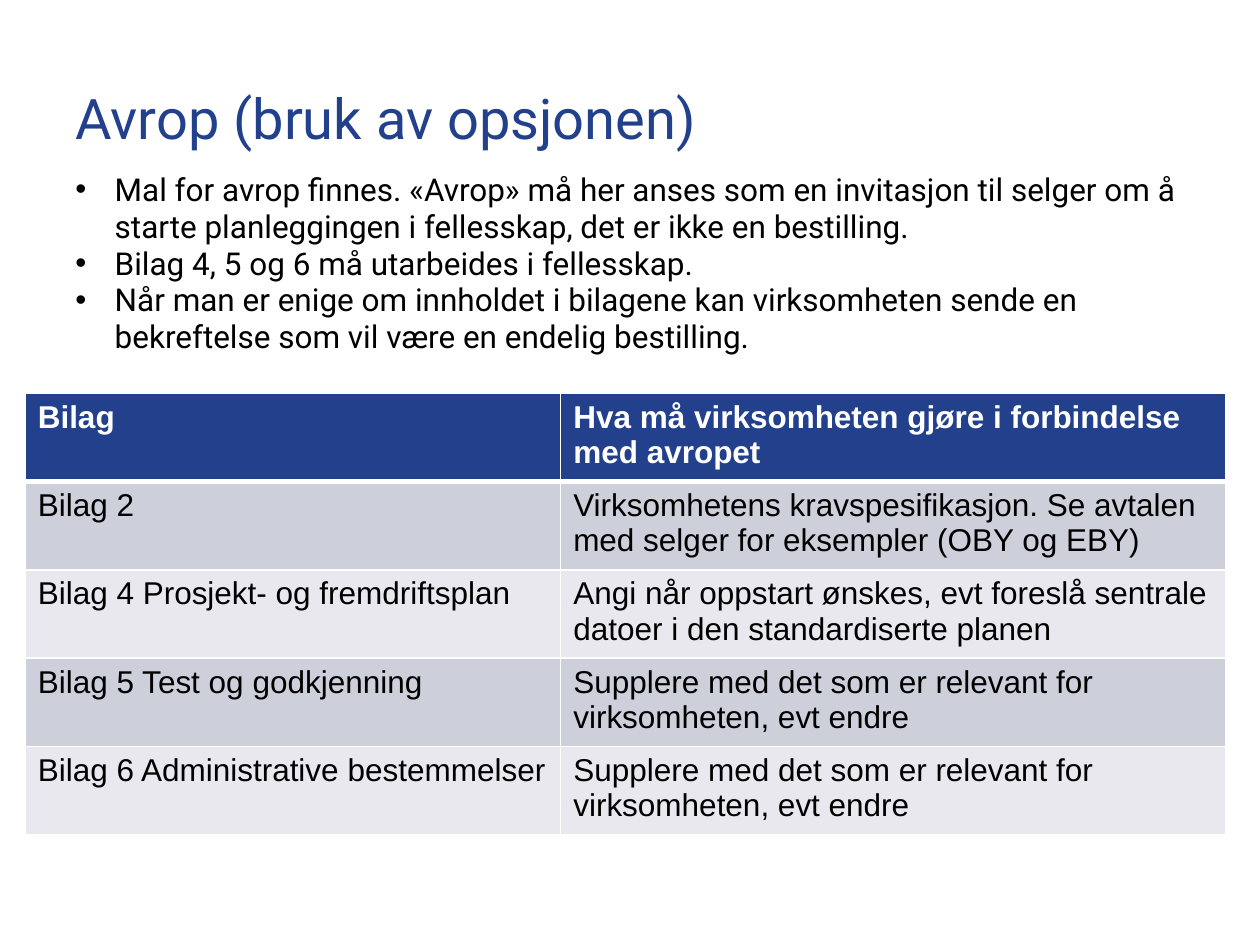
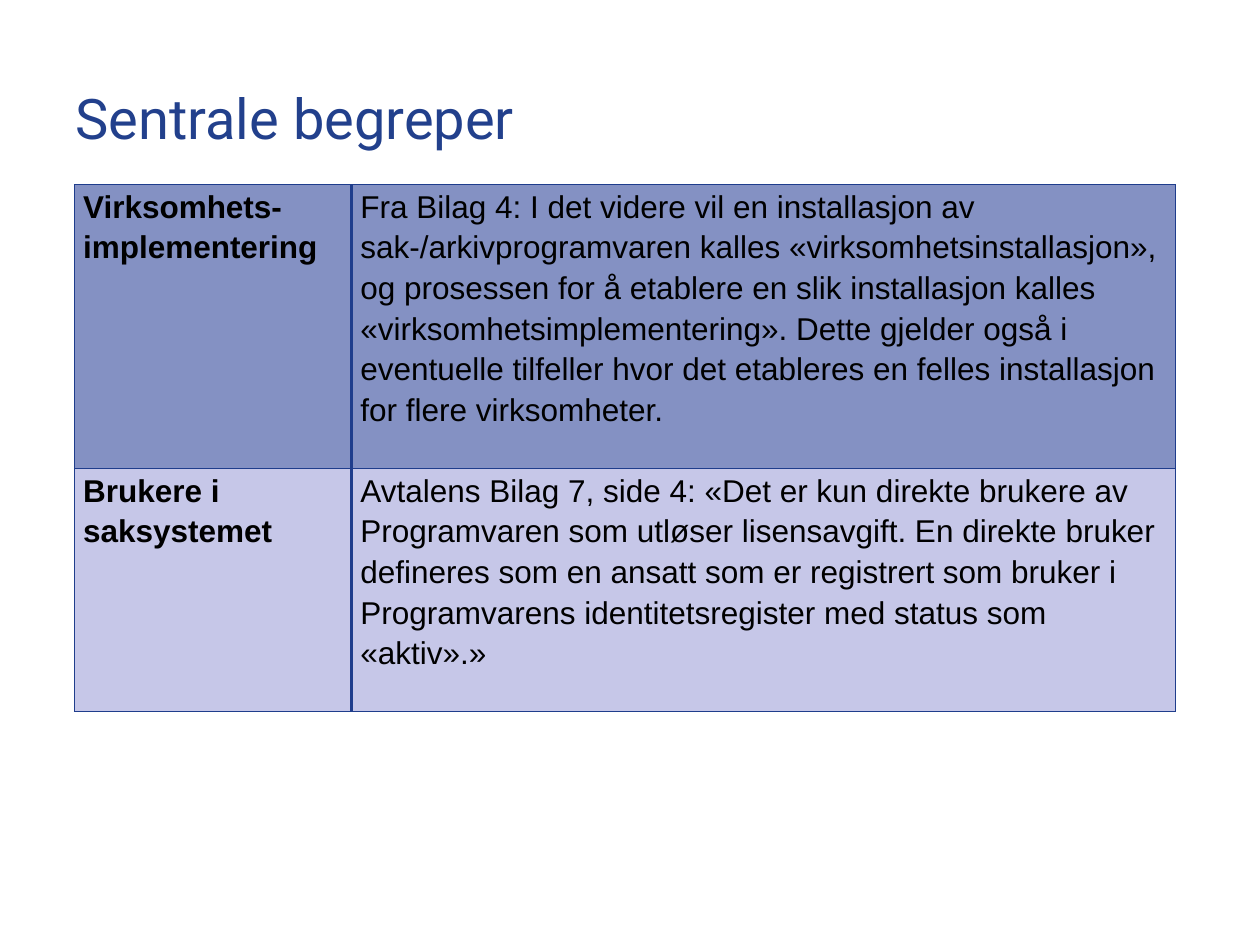
"""Builds two slides about call-offs and key terms, each with a title and a table."""
import pptx
import pptx.dml.color
import pptx.enum.text
import pptx.oxml
import pptx.oxml.ns
import pptx.util

Pt = pptx.util.Pt

COLORS = {
    "blue": "22408C", "edge": "1F3D8C", "black": "000000", "white": "FFFFFF",
    "band_dark": "CDCFDA", "band_light": "E8E8EE",
    "term_dark": "8491C3", "term_light": "C6C7E8",
}


class SlideBuilder:
    """Holds the shared style and the current slide."""

    heading_font = "Roboto"
    table_font = "Arial"
    text_size = 18

    def __init__(self):
        """Start an empty deck."""
        self.deck = pptx.Presentation()
        self.deck.slide_width, self.deck.slide_height = Pt(720), Pt(540)
        self.page = None

    def color(self, name):
        """Return a named colour."""
        return pptx.dml.color.RGBColor.from_string(COLORS[name])

    def style(self, para, font, size, color, bold=False):
        """Set the font of a paragraph."""
        para.font.name, para.font.size, para.font.bold = font, Pt(size), bold
        para.font.color.rgb = self.color(color)

    def text_frame(self, top, height):
        """Add a wrapping text box across the content width."""
        box = self.page.shapes.add_textbox(Pt(36), Pt(top), Pt(648), Pt(height))
        box.text_frame.word_wrap = True
        box.text_frame.vertical_anchor = pptx.enum.text.MSO_ANCHOR.TOP
        return box.text_frame

    def titled_page(self, title):
        """Add a blank slide with the shared title."""
        self.page = self.deck.slides.add_slide(self.deck.slide_layouts[6])
        para = self.text_frame(44, 68).paragraphs[0]
        para.text = title
        self.style(para, self.heading_font, 32, "blue")

    def bullets(self, items):
        """Add the bulleted list below the title."""
        frame = self.text_frame(94.3, 150)
        for index, item in enumerate(items):
            para = frame.paragraphs[0] if index == 0 else frame.add_paragraph()
            para.text = item
            para.line_spacing = Pt(21)
            properties = para._p.get_or_add_pPr()
            properties.set("marL", str(Pt(22.5)))
            properties.set("indent", str(-Pt(22.5)))
            for tag, key, value in (("buFont", "typeface", "Arial"), ("buChar", "char", "•")):
                bullet = pptx.oxml.parse_xml(f'<a:{tag} {pptx.oxml.ns.nsdecls("a")} {key}="{value}"/>')
                properties.append(bullet)
            self.style(para, self.heading_font, self.text_size, "black")

    def borders(self, cell, color, widths):
        """Draw the left, right, top and bottom border of a cell."""
        for side, width in zip("LRTB", widths):
            cell._tc.get_or_add_tcPr().append(pptx.oxml.parse_xml(
                f'<a:ln{side} {pptx.oxml.ns.nsdecls("a")} w="{Pt(width)}"><a:solidFill>'
                f'<a:srgbClr val="{COLORS[color]}"/></a:solidFill></a:ln{side}>'))

    def table(self, left, top, columns, heights, rows, cell_style):
        """Add a table whose cells are styled by a function of row and column."""
        table = self.page.shapes.add_table(
            len(rows), len(columns), Pt(left), Pt(top), Pt(sum(columns)), Pt(sum(heights))).table
        table.first_row = table.horz_banding = False
        for column, width in zip(table.columns, columns):
            column.width = Pt(width)
        for row_index, texts in enumerate(rows):
            table.rows[row_index].height = Pt(heights[row_index])
            for column_index, text in enumerate(texts):
                cell = table.cell(row_index, column_index)
                look = cell_style(row_index, column_index)
                self.borders(cell, look["edge"], look["widths"])
                cell.fill.solid()
                cell.fill.fore_color.rgb = self.color(look["fill"])
                if "margins" in look:
                    side, end = look["margins"]
                    cell.margin_left = cell.margin_right = Pt(side)
                    cell.margin_top = cell.margin_bottom = Pt(end)
                para = cell.text_frame.paragraphs[0]
                para.text = text
                para.line_spacing = look.get("spacing", 1.0)
                self.style(para, self.table_font, self.text_size, look["text"], look["bold"])


def appendix_style(row, column):
    """Style a banded table with a dark header row."""
    header = row == 0
    fill = "blue" if header else ("band_light", "band_dark")[row % 2]
    return {"fill": fill, "text": "white" if header else "black", "bold": header,
            "edge": "white", "widths": (1, 1, 3 if row == 1 else 1, 3 if header else 1)}


def term_style(row, column):
    """Style a table of bold terms and their definitions."""
    widths = (0.75, 2, 0.75, 0.75) if column == 0 else (2, 0.75, 0.75, 0.75)
    return {"fill": ("term_dark", "term_light")[row], "text": "black", "bold": column == 0,
            "edge": "edge", "widths": widths, "margins": (5, 0), "spacing": 1.15}


def main():
    """Build and save the deck."""
    builder = SlideBuilder()

    builder.titled_page("Avrop (bruk av opsjonen)")
    builder.bullets([
        "Mal for avrop finnes. «Avrop» må her anses som en invitasjon til selger om å "
        "starte planleggingen i fellesskap, det er ikke en bestilling.",
        "Bilag 4, 5 og 6 må utarbeides i fellesskap.",
        "Når man er enige om innholdet i bilagene kan virksomheten sende en "
        "bekreftelse som vil være en endelig bestilling.",
    ])
    supplement = "Supplere med det som er relevant for virksomheten, evt endre"
    appendices = [
        ("Bilag", "Hva må virksomheten gjøre i forbindelse med avropet"),
        ("Bilag 2", "Virksomhetens kravspesifikasjon. Se avtalen med selger for eksempler (OBY og EBY)"),
        ("Bilag 4 Prosjekt- og fremdriftsplan",
         "Angi når oppstart ønskes, evt foreslå sentrale datoer i den standardiserte planen"),
        ("Bilag 5 Test og godkjenning", supplement),
        ("Bilag 6 Administrative bestemmelser", supplement),
    ]
    builder.table(14.4, 224.8, (306, 380), [47.4] * len(appendices), appendices, appendix_style)

    builder.titled_page("Sentrale begreper")
    terms = [
        ("Virksomhets-implementering",
         "Fra Bilag 4: I det videre vil en installasjon av sak-/arkivprogramvaren kalles "
         "«virksomhetsinstallasjon», og prosessen for å etablere en slik installasjon kalles "
         "«virksomhetsimplementering». Dette gjelder også i eventuelle tilfeller hvor det "
         "etableres en felles installasjon for flere virksomheter."),
        ("Brukere i saksystemet",
         "Avtalens Bilag 7, side 4: «Det er kun direkte brukere av Programvaren som utløser "
         "lisensavgift. En direkte bruker defineres som en ansatt som er registrert som bruker i "
         "Programvarens identitetsregister med status som «aktiv».»"),
    ]
    builder.table(42.5, 105.5, (158.5, 471), (162.3, 138.9), terms, term_style)

    builder.deck.save("out.pptx")


if __name__ == "__main__":
    main()
